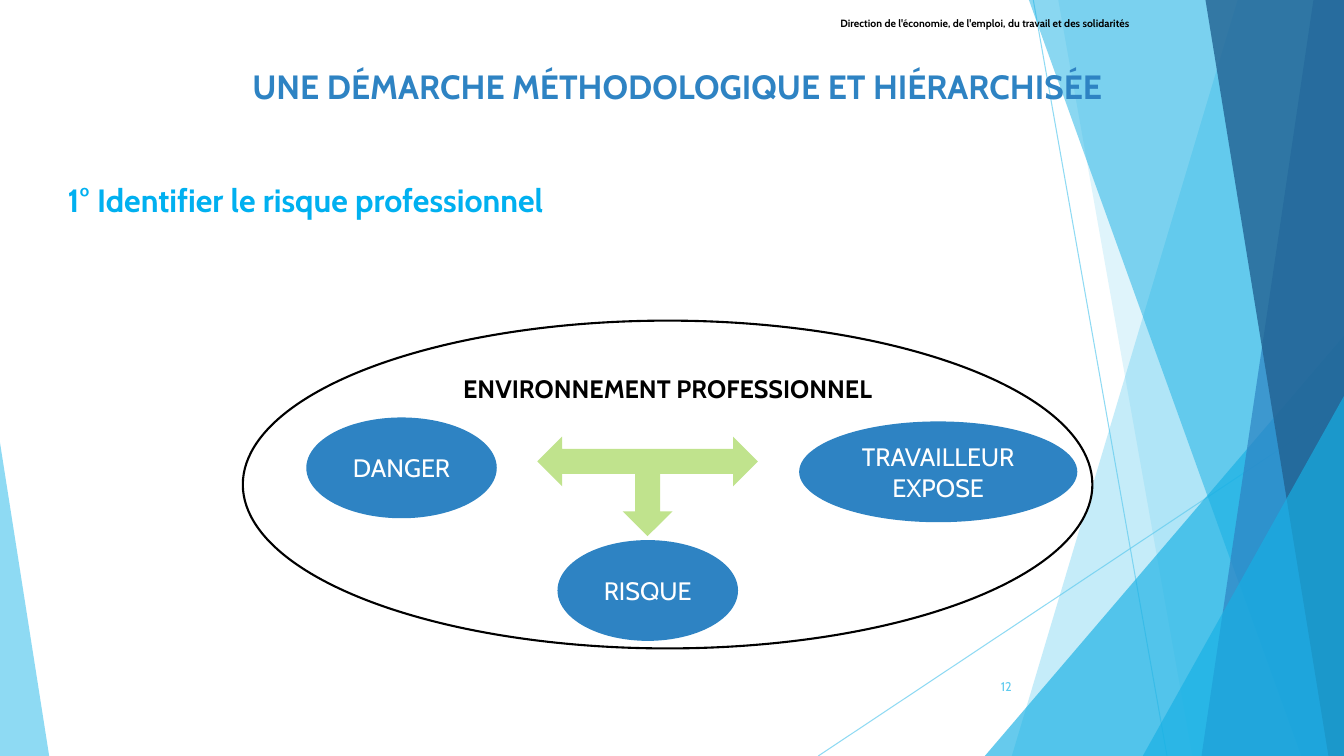
import pptx
import pptx.util
import pptx.dml.color
import pptx.enum.shapes
import pptx.enum.text
import pptx.oxml.ns
import lxml.etree

Cm = pptx.util.Cm
Kind = pptx.enum.shapes.MSO_SHAPE
Align = pptx.enum.text.PP_ALIGN
Anchor = pptx.enum.text.MSO_ANCHOR
WIDE, HIGH = 33.87, 19.05
BLUE, SKY, CYAN = "2E83C3", "5FCBEF", "17B0E4"


def paint(fill, color, alpha=100):
    """Give a fill a solid colour, with an opacity in percent."""
    fill.solid()
    fill.fore_color.rgb = pptx.dml.color.RGBColor.from_string(color)
    if alpha < 100:
        tint = next(fill._xPr.iter(pptx.oxml.ns.qn("a:srgbClr")))
        lxml.etree.SubElement(tint, pptx.oxml.ns.qn("a:alpha"), val=str(alpha * 1000))


def write(shape, words, size=18, color="FFFFFF", bold=False,
          align=Align.CENTER, anchor=Anchor.MIDDLE, after=0):
    """Set the text of a shape and its format."""
    frame = shape.text_frame
    frame.word_wrap = True
    frame.auto_size = pptx.enum.text.MSO_AUTO_SIZE.NONE
    frame.vertical_anchor = anchor
    para = frame.paragraphs[0]
    para.text = words
    para.alignment = align
    para.space_before = pptx.util.Pt(0)
    para.space_after = pptx.util.Pt(after)
    font = para.font
    font.name, font.size, font.bold = "Cabin", pptx.util.Pt(size), bold
    paint(font.fill, color)


def finish(shape, color, alpha=100):
    """Fill a shape and leave it without outline or shadow."""
    shape.shadow.inherit = False
    paint(shape.fill, color, alpha)
    shape.line.fill.background()
    return shape


def draw(slide, kind, box, color, alpha=100):
    """Add a preset shape in a box."""
    shape = slide.shapes.add_shape(kind, *map(Cm, box))
    return finish(shape, color, alpha)


def decor(slide, box):
    """Draw the lines and the translucent facets of the background."""
    left, top, wide, high = box
    for x1, y1, x2, y2 in ((26.04, 0, 29.41, high), (wide, 10.24, 20.62, high)):
        ends = map(Cm, (left + x1, top + y1, left + x2, top + y2))
        line = slide.shapes.add_connector(pptx.enum.shapes.MSO_CONNECTOR.STRAIGHT, *ends)
        line.line.width = pptx.util.Pt(0.75)
        paint(line.line.fill, SKY, 70)
        lxml.etree.SubElement(line.element.spPr, pptx.oxml.ns.qn("a:effectLst"))

    def facet(upper, lower, color, alpha):
        """Draw a band from two points to the right edge."""
        spots = [(Cm(left + x), Cm(top + y)) for x, y in
                 ((upper, 0), (wide, 0), (wide, high), (lower, high))]
        pen = slide.shapes.build_freeform(*spots[0])
        pen.add_line_segments(spots[1:])
        finish(pen.convert_to_shape(), color, alpha)

    def wedge(start, width, height, tip, color, alpha):
        """Draw a right triangle standing on the bottom edge."""
        area = (left + start, top + high - height, width, height)
        draw(slide, Kind.ISOSCELES_TRIANGLE, area, color, alpha).adjustments[0] = tip

    facet(31.19, 25.5, SKY, 36)
    facet(26.67, 30.05, SKY, 20)
    wedge(24.82, 9.05, 10.59, 1, CYAN, 66)
    facet(25.93, 32.79, CYAN, 50)
    facet(33.1, 30.28, BLUE, 70)
    facet(30.38, 33.48, "226292", 80)
    wedge(28.8, 5.07, 9.07, 1, CYAN, 66)
    wedge(0, 1.24, 7.9, 0, SKY, 70)


def place(holder, box):
    """Move a placeholder to a box, in front of what is drawn so far."""
    holder.left, holder.top, holder.width, holder.height = map(Cm, box)
    holder.element.getparent().append(holder.element)


def head(slide, box):
    """Write the slide title."""
    title = slide.shapes.title
    place(title, box)
    write(title, "UNE DÉMARCHE MÉTHODOLOGIQUE ET HIÉRARCHISÉE", size=24, color=BLUE, bold=True)


def step(slide, box):
    """Write the step heading in the body placeholder."""
    body = slide.placeholders[1]
    place(body, box)
    props = body.text_frame.paragraphs[0]._p.get_or_add_pPr()
    props.set("marL", str(Cm(0.03)))
    props.set("indent", str(Cm(0.22)))
    lxml.etree.SubElement(props, pptx.oxml.ns.qn("a:buNone"))
    write(body, "1° Identifier le risque professionnel", size=23, color="00B0F0",
          bold=True, align=Align.LEFT, anchor=Anchor.TOP, after=8)


def scheme(slide, box):
    """Draw the work setting with danger, worker and risk."""
    left, top = box[:2]
    ring = draw(slide, Kind.OVAL, box, "FFFFFF")
    paint(ring.line.fill, "000000")
    ring.line.width = pptx.util.Pt(1.5)
    write(ring, "ENVIRONNEMENT PROFESSIONNEL", color="000000", bold=True, anchor=Anchor.TOP)
    for words, x, y, width in (("DANGER", 1.6, 2.44, 4.8),
                               ("TRAVAILLEUR EXPOSE", 14.02, 2.54, 7.01),
                               ("RISQUE", 7.93, 5.53, 4.55)):
        write(draw(slide, Kind.OVAL, (left + x, top + y, width, 2.54), BLUE), words)
    area = (left + 7.42, top + 2.92, 5.56, 2.51)
    draw(slide, Kind.LEFT_RIGHT_UP_ARROW, area, "C0E38D").rotation = 180


def note(slide, box, words, **form):
    """Add a text box."""
    write(slide.shapes.add_textbox(*map(Cm, box)), words, **form)


def main():
    """Build and save the slide."""
    deck = pptx.Presentation()
    deck.slide_width, deck.slide_height = Cm(WIDE), Cm(HIGH)
    slide = deck.slides.add_slide(deck.slide_layouts[1])
    decor(slide, (0, 0, WIDE, HIGH))
    note(slide, (23.85, 16.79, 1.9, 1.02), "12", size=9, color=SKY, align=Align.RIGHT)
    step(slide, (1.2, 4.42, 31.19, 1.68))
    head(slide, (1.47, 1.17, 31.19, 2))
    scheme(slide, (6.12, 8.08, 21.41, 8.26))
    note(slide, (19.46, 0.3, 10.72, 1.07),
         "Direction de l'économie, de l'emploi, du travail et des solidarités",
         size=7.5, color="000000", bold=True, anchor=Anchor.TOP)
    deck.save("out.pptx")


if __name__ == "__main__":
    main()
